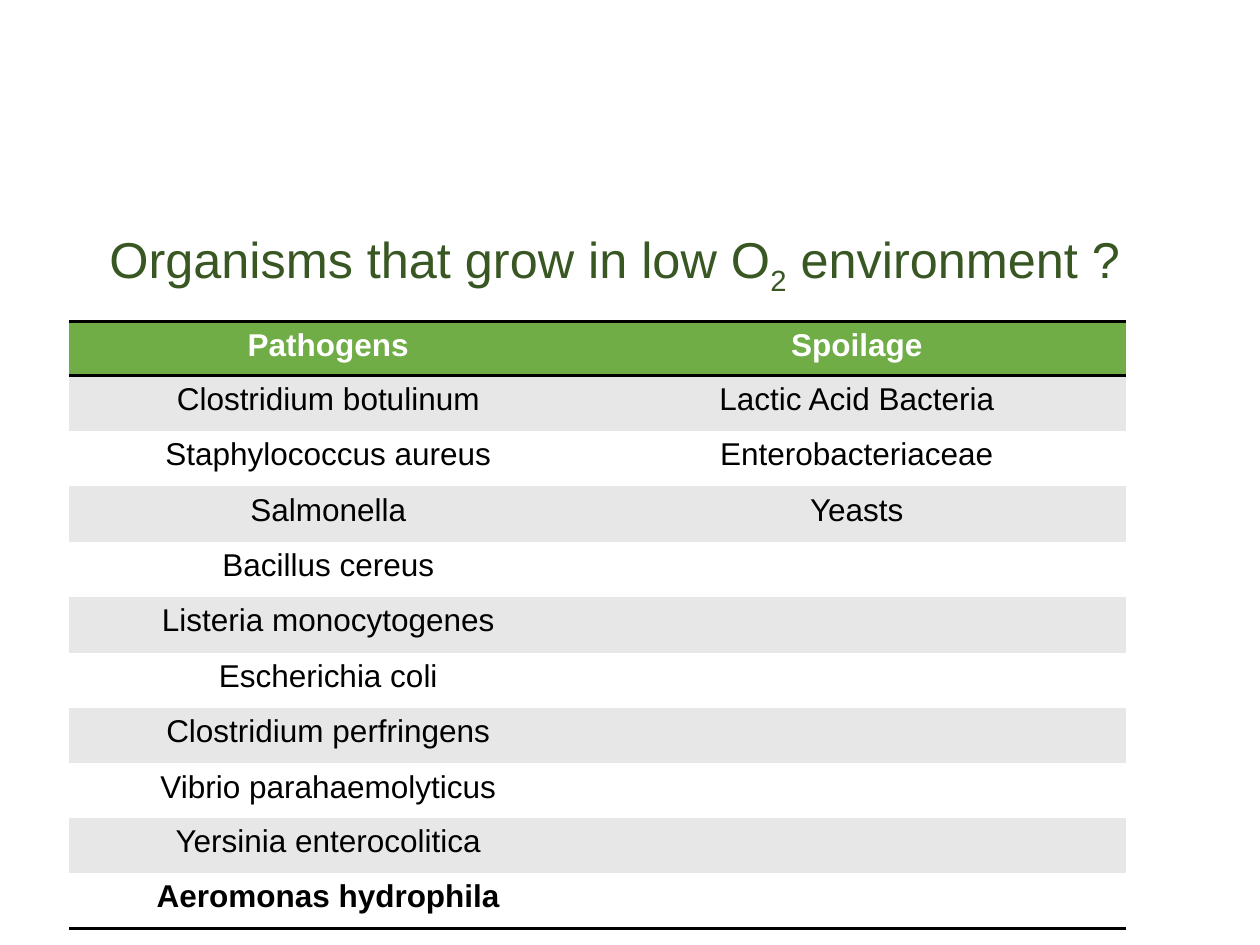
from itertools import zip_longest

from lxml.etree import SubElement
from pptx import Presentation
from pptx.dml.color import RGBColor
from pptx.enum.text import MSO_ANCHOR as Anchor, PP_ALIGN as Align
from pptx.oxml.ns import qn
from pptx.util import Inches, Pt

DARK_GREEN = RGBColor(0x38, 0x57, 0x23)
GREEN = RGBColor(0x70, 0xAD, 0x47)
GRAY = RGBColor(0xE7, 0xE7, 0xE7)
WHITE = RGBColor(0xFF, 0xFF, 0xFF)
BLACK = RGBColor(0, 0, 0)
NO_STYLE_NO_GRID = "{2D5ABB26-0587-4C30-8999-92F81FD0307C}"

PATHOGENS = [
    "Pathogens", "Clostridium botulinum", "Staphylococcus aureus", "Salmonella",
    "Bacillus cereus", "Listeria monocytogenes", "Escherichia coli",
    "Clostridium perfringens", "Vibrio parahaemolyticus",
    "Yersinia enterocolitica", "Aeromonas hydrophila",
]
SPOILAGE = ["Spoilage", "Lactic Acid Bacteria", "Enterobacteriaceae", "Yeasts"]
COLUMN_WIDTHS = [Inches(4.11), Inches(4.28)]
ROW_HEIGHT = Inches(0.44)


def format_font(font, **values):
    font.color.rgb = values.pop("color")
    for name, value in values.items():
        setattr(font, name, value)


def add_border(cell, side):
    line = SubElement(cell._tc.get_or_add_tcPr(), qn(f"a:ln{side}"), w=str(Pt(2)))
    fill = SubElement(line, qn("a:solidFill"))
    SubElement(fill, qn("a:srgbClr"), val=str(BLACK))


presentation = Presentation()
presentation.slide_width = Inches(10)
presentation.slide_height = Inches(7.5)
slide = presentation.slides.add_slide(presentation.slide_layouts[6])

title = slide.shapes.add_textbox(Inches(0.77), Inches(1.65), Inches(8.33), Inches(0.83))
title.text_frame.word_wrap = True
title.text_frame.vertical_anchor = Anchor.MIDDLE
paragraph = title.text_frame.paragraphs[0]
paragraph.line_spacing = 0.9
for text, baseline in [("Organisms that grow in low O", 0), ("2", -25), (" environment ?", 0)]:
    run = paragraph.add_run()
    run.text = text
    format_font(run.font, name="Arial", size=Pt(28.8), color=DARK_GREEN)
    if baseline:
        run.font._element.set("baseline", str(baseline * 1000))

last_row = len(PATHOGENS) - 1
frame = slide.shapes.add_table(
    len(PATHOGENS), len(COLUMN_WIDTHS), Inches(0.55), Inches(2.55),
    sum(COLUMN_WIDTHS), ROW_HEIGHT * len(PATHOGENS))
table = frame.table
table._tbl.tblPr.find(qn("a:tableStyleId")).text = NO_STYLE_NO_GRID
for column, width in zip(table.columns, COLUMN_WIDTHS):
    column.width = width

for row, names in enumerate(zip_longest(PATHOGENS, SPOILAGE, fillvalue="")):
    table.rows[row].height = Inches(0.43) if row in (0, 8) else ROW_HEIGHT
    header = row == 0
    for column, name in enumerate(names):
        cell = table.cell(row, column)
        if header:
            add_border(cell, "T")
        if row in (0, last_row):
            add_border(cell, "B")
        cell.fill.solid()
        cell.fill.fore_color.rgb = GREEN if header else GRAY if row % 2 else WHITE
        paragraph = cell.text_frame.paragraphs[0]
        paragraph.alignment = Align.CENTER
        if name:
            run = paragraph.add_run()
            run.text = name
            format_font(run.font, name="Arial", size=Pt(18),
                        bold=row in (0, last_row), color=WHITE if header else BLACK)

presentation.save("out.pptx")
